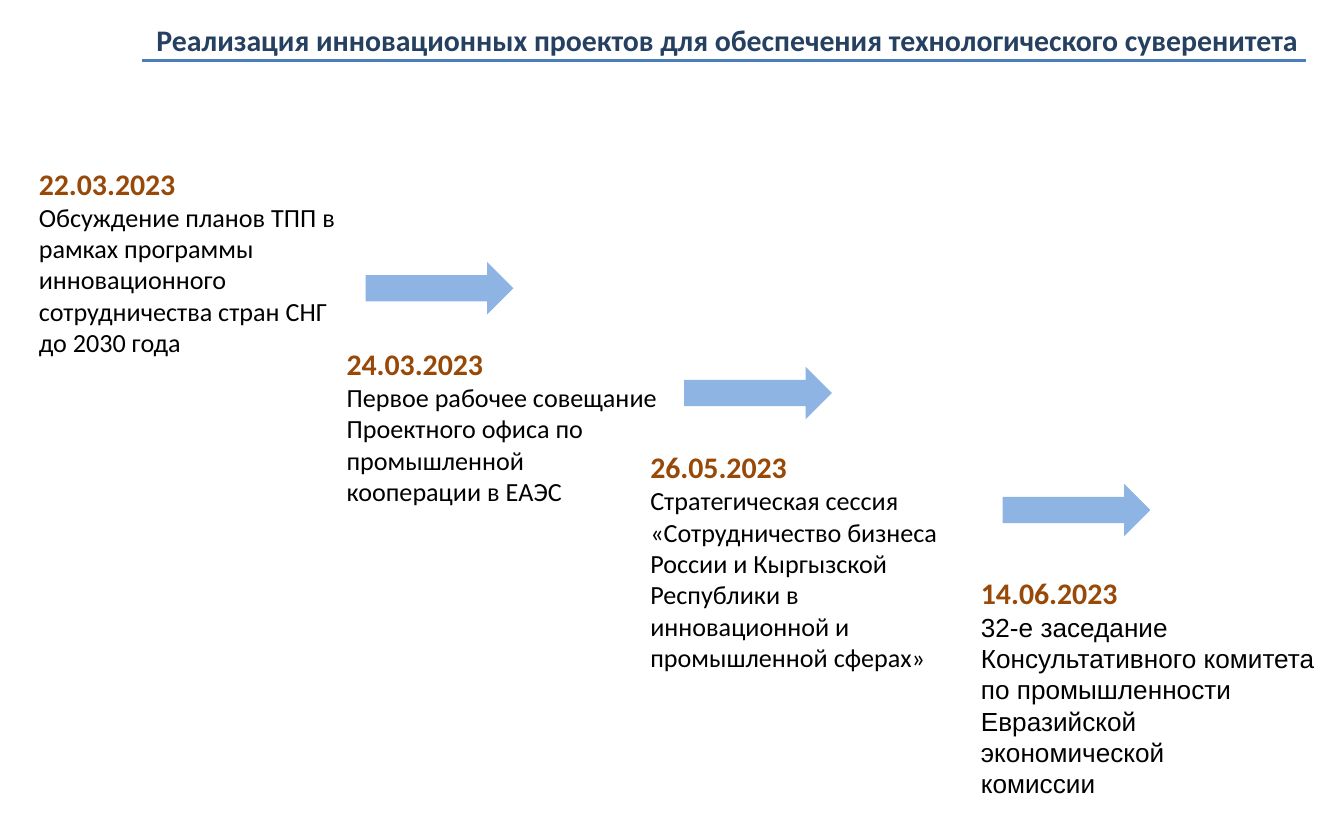
from lxml import etree
from pptx import Presentation
from pptx import util as u
from pptx.dml.color import RGBColor
from pptx.enum import shapes, text
from pptx.oxml import ns

SCALE = 9144  # EMU in one px, 100 px to the inch
ARROW = (110, 39)

STEPS = [
    ((19, 118, 242, 155), "22.03.2023", "Calibri",
     ["Обсуждение планов ТПП в рамках программы инновационного "
      "сотрудничества стран СНГ до 2030 года"]),
    ((248, 252, 252, 151), "24.03.2023", "Calibri",
     ["Первое рабочее совещание", "Проектного офиса по промышленной",
      "кооперации в ЕАЭС"]),
    ((474, 329, 247, 178), "26.05.2023", "Calibri",
     ["Стратегическая сессия «Сотрудничество бизнеса России и Кыргызской "
      "Республики в инновационной и промышленной сферах»"]),
    ((720, 423, 271, 178), "14.06.2023", "Arial",
     ["32-е заседание Консультативного комитета по промышленности "
      "Евразийской", "экономической", "комиссии"]),
]
ARROWS = [(272, 195), (509, 273), (746, 360)]


def px(*nums):
    return [u.Emu(n * SCALE) for n in nums]


def color(code):
    return RGBColor.from_string(code)


def add_box(slide, box):
    frame = slide.shapes.add_textbox(*px(*box)).text_frame
    frame.word_wrap = True
    frame.auto_size = text.MSO_AUTO_SIZE.SHAPE_TO_FIT_TEXT
    return frame


def write(para, words, size=14, font="Calibri", ink="000000", bold=False,
          align=text.PP_ALIGN.LEFT):
    para.alignment = align
    run = para.add_run()
    run.text = words
    run.font.size = u.Pt(size)
    run.font.name = font
    run.font.bold = bold
    run.font.color.rgb = color(ink)


def add_title(slide, box):
    """Right-aligned heading with a rule under it."""
    left, top, width, height = box
    write(add_box(slide, box).paragraphs[0],
          "Реализация инновационных проектов для обеспечения "
          "технологического суверенитета",
          size=16, ink="254061", bold=True, align=text.PP_ALIGN.RIGHT)
    base = top + height - 3
    rule = slide.shapes.add_connector(
        shapes.MSO_CONNECTOR.STRAIGHT,
        *px(left + 32, base, left + width - 4, base))
    rule.line.color.rgb = color("4B7EBC")
    rule.line.width = u.Pt(1.25)
    etree.SubElement(rule._element.spPr, ns.qn("a:effectLst"))


def add_step(slide, box, date, font, lines):
    frame = add_box(slide, box)
    write(frame.paragraphs[0], date, size=16, ink="984807", bold=True)
    for line in lines:
        write(frame.add_paragraph(), line, font=font)


def add_arrow(slide, box):
    arrow = slide.shapes.add_shape(shapes.MSO_SHAPE.RIGHT_ARROW, *px(*box))
    arrow.shadow.inherit = False
    arrow.fill.solid()
    arrow.fill.fore_color.rgb = color("8EB4E3")
    arrow.line.fill.background()


def main():
    deck = Presentation()
    deck.slide_width, deck.slide_height = px(1000, 625)
    slide = deck.slides.add_slide(deck.slide_layouts[6])
    add_title(slide, (74, 11, 902, 37))
    for step in STEPS:
        add_step(slide, *step)
    for spot in ARROWS:
        add_arrow(slide, spot + ARROW)
    deck.save("out.pptx")


if __name__ == "__main__":
    main()
